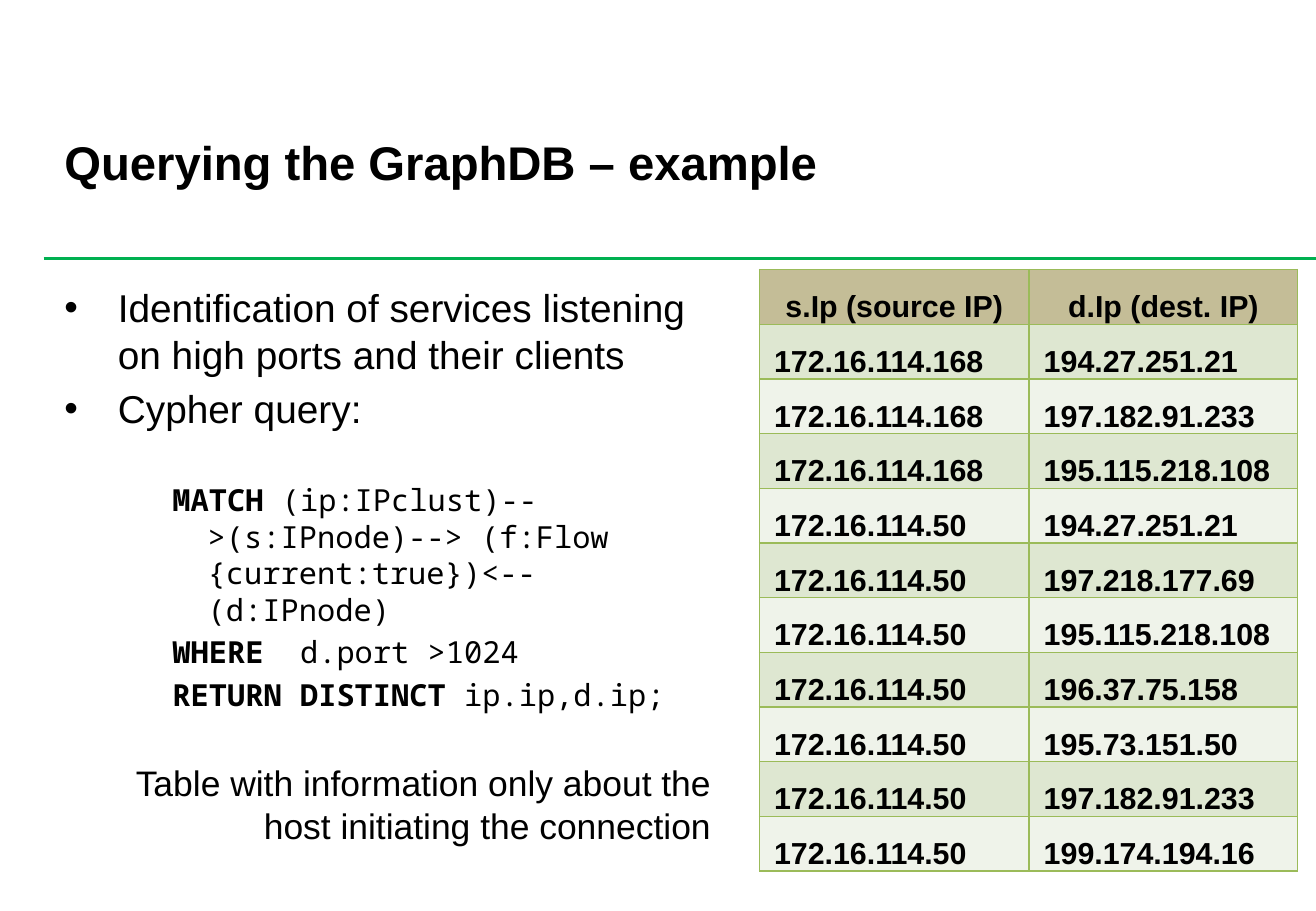
from lxml.etree import SubElement
from pptx import Presentation
from pptx.dml.color import RGBColor as RGB
from pptx.enum.shapes import MSO_CONNECTOR as LINK
from pptx.enum.text import MSO_ANCHOR as ANCHOR, MSO_AUTO_SIZE as FIT, PP_ALIGN as ALIGN
from pptx.oxml import parse_xml
from pptx.oxml.ns import nsdecls, qn
from pptx.util import Inches, Pt

HUES = {"text": "000000", "rule": "00B050", "edge": "9BBB59",
        "head": "C4BD97", "odd": "DEE7D1", "even": "EFF3EA"}
SANS, MONO = "Arial", "Noto Sans Mono"
HEADS = ("s.Ip (source IP)", "d.Ip (dest. IP)")
HOSTS = [
    ("172.16.114.168", ("194.27.251.21", "197.182.91.233", "195.115.218.108")),
    ("172.16.114.50", ("194.27.251.21", "197.218.177.69", "195.115.218.108",
                       "196.37.75.158", "195.73.151.50", "197.182.91.233",
                       "199.174.194.16")),
]
POINTS = ("Identification of services listening on high ports and their clients",
          "Cypher query:")
QUERY = [
    ("MATCH", " (ip:IPclust)-->(s:IPnode)--> (f:Flow {current:true})<--(d:IPnode)", 29.5),
    ("WHERE  ", "d.port >1024", 3.6),
    ("RETURN DISTINCT ", "ip.ip,d.ip;", 3.6),
]


def hue(name):
    """Return a named colour."""
    return RGB.from_string(HUES[name])


def add_run(para, text, size, face=SANS, bold=False):
    """Add one formatted run to a paragraph."""
    run = para.add_run()
    run.text = text
    font = run.font
    font.name, font.size, font.bold = face, Pt(size), bold
    font.color.rgb = hue("text")


def set_frame(frame, side, top, anchor=ANCHOR.TOP):
    """Set the wrapping, insets and anchor of a text frame."""
    frame.word_wrap = True
    frame.auto_size = FIT.NONE
    frame.margin_left = frame.margin_right = Inches(side)
    frame.margin_top = frame.margin_bottom = Inches(top)
    frame.vertical_anchor = anchor


def add_box(slide, left, top, width, height, side, inset):
    """Add a text box and return its frame."""
    box = slide.shapes.add_textbox(Inches(left), Inches(top), Inches(width), Inches(height))
    set_frame(box.text_frame, side, inset)
    return box.text_frame


def set_indent(para, left, hang, mark=None):
    """Set a hanging indent and an optional bullet."""
    props = para._p.get_or_add_pPr()
    props.set("marL", str(Inches(left)))
    props.set("indent", str(-Inches(hang)))
    if mark:
        SubElement(props, qn("a:buFont"), typeface=SANS)
        SubElement(props, qn("a:buChar"), char=mark)


def add_title(slide):
    """Place and fill the title."""
    title = slide.shapes.title
    title.left, title.top = Inches(0.41), Inches(1.05)
    title.width, title.height = Inches(9.16), Inches(0.56)
    set_frame(title.text_frame, 0.12, 0.06, ANCHOR.MIDDLE)
    para = title.text_frame.paragraphs[0]
    para.alignment = ALIGN.LEFT
    add_run(para, "Querying the GraphDB – example", 28, bold=True)


def add_rule(slide):
    """Draw the green line under the title."""
    rule = slide.shapes.add_connector(
        LINK.STRAIGHT, Inches(0.36), Inches(2.13), Inches(10.83), Inches(2.13))
    rule.line.color.rgb = hue("rule")
    rule.line.width = Pt(1.5)
    SubElement(rule._element.spPr, qn("a:effectLst"))


def add_body(slide):
    """Add the bullets and the query."""
    frame = add_box(slide, 0.41, 2.28, 5.36, 4.71, 0.12, 0.06)
    for i, text in enumerate(POINTS):
        para = frame.add_paragraph() if i else frame.paragraphs[0]
        set_indent(para, 0.44, 0.44, "•")
        if i:
            para.space_before = Pt(4.6)
        add_run(para, text, 23)
    for word, rest, gap in QUERY:
        para = frame.add_paragraph()
        set_indent(para, 1.18, 0.29)
        para.space_before = Pt(gap)
        add_run(para, word, 18, MONO, True)
        add_run(para, rest, 18, MONO)


def add_note(slide):
    """Add the remark about the table."""
    frame = add_box(slide, 0.53, 6.22, 5.42, 0.83, 0.1, 0.05)
    para = frame.paragraphs[0]
    para.alignment = ALIGN.RIGHT
    add_run(para, "Table with information only about the host initiating the connection", 21)


def set_edges(cell):
    """Draw the four borders of a cell."""
    props = cell._tc.get_or_add_tcPr()
    for i, side in enumerate("LRTB"):
        props.insert(i, parse_xml(
            f'<a:ln{side} {nsdecls("a")} w="{Pt(1)}"><a:solidFill>'
            f'<a:srgbClr val="{HUES["edge"]}"/></a:solidFill></a:ln{side}>'))


def fill_cell(cell, text, tone, left, align):
    """Fill and format one table cell."""
    cell.fill.solid()
    cell.fill.fore_color.rgb = hue(tone)
    cell.margin_left, cell.margin_right = Inches(left), Inches(0.04)
    cell.margin_top = cell.margin_bottom = 0
    cell.vertical_anchor = ANCHOR.BOTTOM
    para = cell.text_frame.paragraphs[0]
    para.alignment, para.line_spacing = align, 1.5
    add_run(para, text, 18, bold=True)
    set_edges(cell)


def add_grid(slide):
    """Add the table of addresses."""
    rows = [HEADS] + [(host, dest) for host, dests in HOSTS for dest in dests]
    table = slide.shapes.add_table(len(rows), 2, Inches(6.25), Inches(2.22),
                                   Inches(4.43), Inches(0.45 * len(rows))).table
    table.first_row = table.horz_banding = False
    for col, width in zip(table.columns, (2.22, 2.21)):
        col.width = Inches(width)
    for r, row in enumerate(rows):
        table.rows[r].height = Inches(0.45)
        tone = ("odd" if r % 2 else "even") if r else "head"
        left, align = (0.12, ALIGN.LEFT) if r else (0.04, ALIGN.CENTER)
        for c, text in enumerate(row):
            fill_cell(table.cell(r, c), text, tone, left, align)


def main():
    """Build and save the slide."""
    deck = Presentation()
    deck.slide_width, deck.slide_height = Inches(10.83), Inches(7.5)
    slide = deck.slides.add_slide(deck.slide_layouts[5])
    add_rule(slide)
    add_title(slide)
    add_body(slide)
    add_grid(slide)
    add_note(slide)
    deck.save("out.pptx")


if __name__ == "__main__":
    main()
